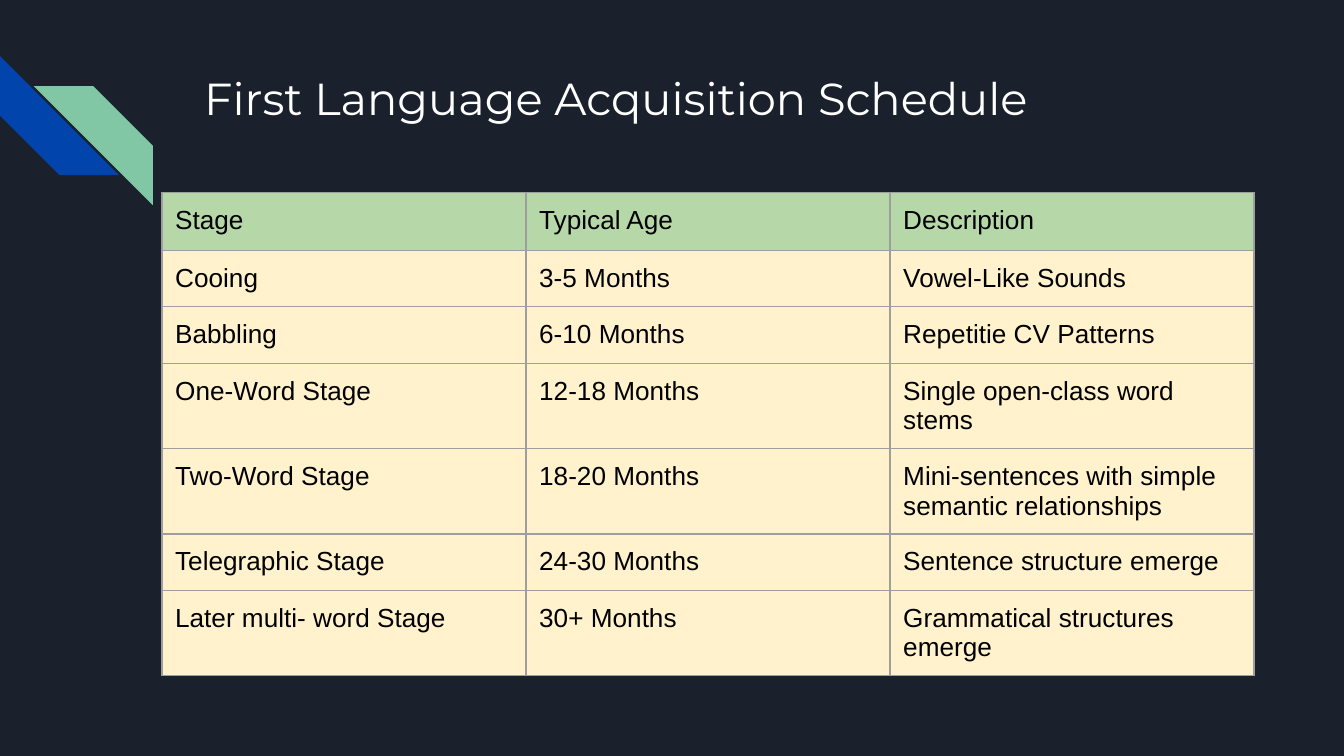
from dataclasses import dataclass

from lxml import etree
from pptx import Presentation
from pptx.dml.color import RGBColor
from pptx.enum.shapes import MSO_SHAPE
from pptx.enum.text import MSO_ANCHOR, PP_ALIGN
from pptx.oxml.ns import qn
from pptx.util import Cm, Pt

STRIPE = MSO_SHAPE.DIAGONAL_STRIPE
TOP = MSO_ANCHOR.TOP
LEFT = PP_ALIGN.LEFT
TITLE_ONLY = 5
INSET = Cm(0.25)
MARGINS = ("margin_left", "margin_top", "margin_right", "margin_bottom")
BORDER_SIDES = ("a:lnL", "a:lnR", "a:lnT", "a:lnB")


@dataclass(frozen=True)
class Theme:
    """Colours, fonts and type sizes of the slide."""
    background: str = "1B212C"
    blue: str = "0145AC"
    green: str = "82C7A5"
    header: str = "B6D7A8"
    body: str = "FFF2CC"
    border: str = "9E9E9E"
    title_text: str = "FFFFFF"
    cell_text: str = "000000"
    title_font: str = "Montserrat"
    cell_font: str = "Arial"
    title_size: float = 24
    cell_size: float = 14
    border_width: float = 0.75


THEME = Theme()
STAGES = (
    ("Stage", "Typical Age", "Description"),
    ("Cooing", "3-5 Months", "Vowel-Like Sounds"),
    ("Babbling", "6-10 Months", "Repetitie CV Patterns"),
    ("One-Word Stage", "12-18 Months", "Single open-class word stems"),
    ("Two-Word Stage", "18-20 Months", "Mini-sentences with simple semantic relationships"),
    ("Telegraphic Stage", "24-30 Months", "Sentence structure emerge"),
    ("Later multi- word Stage", "30+ Months", "Grammatical structures emerge"),
)
ROW_HEIGHTS = (1.09, 1.07, 1.07, 1.09, 1.35, 1.07, 1.35)


def paint(fill, color):
    """Give a fill one solid colour."""
    fill.solid()
    fill.fore_color.rgb = RGBColor.from_string(color)


def style_text(paragraph, font_name, size, color):
    """Set the font and alignment of a paragraph."""
    paragraph.alignment = LEFT
    paragraph.font.name = font_name
    paragraph.font.size = Pt(size)
    paragraph.font.bold = False
    paragraph.font.color.rgb = RGBColor.from_string(color)


def set_margins(holder):
    """Give a text frame or cell equal margins on all sides."""
    for margin in MARGINS:
        setattr(holder, margin, INSET)


def add_stripe(group, left, top, size, color):
    """Add a square diagonal stripe to a group."""
    stripe = group.shapes.add_shape(STRIPE, left, top, size, size)
    stripe.shadow.inherit = False
    paint(stripe.fill, color)
    stripe.line.fill.background()
    return stripe


def add_ornament(slide, left, top, size):
    """Place the pair of crossing stripes from the given corner."""
    group = slide.shapes.add_group_shape()
    blue = add_stripe(group, left, top, size, THEME.blue)
    blue.rotation = 270
    green = add_stripe(group, left + Cm(0.64), top + Cm(0.57), size, THEME.green)
    green.element.spPr.find(qn("a:xfrm")).set("flipH", "1")


def add_title(slide, left, top, width, height, text):
    """Place and format the title placeholder."""
    title = slide.shapes.title
    title.left, title.top, title.width, title.height = left, top, width, height
    frame = title.text_frame
    frame.text = text
    frame.word_wrap = True
    frame.vertical_anchor = TOP
    set_margins(frame)
    style_text(frame.paragraphs[0], THEME.title_font, THEME.title_size, THEME.title_text)


def add_borders(cell):
    """Draw a thin line on every side of a cell."""
    properties = cell._tc.get_or_add_tcPr()
    for side in BORDER_SIDES:
        line = etree.SubElement(properties, qn(side), w=str(Pt(THEME.border_width)))
        fill = etree.SubElement(line, qn("a:solidFill"))
        etree.SubElement(fill, qn("a:srgbClr"), val=THEME.border)


def add_schedule(slide, left, top, width, rows, heights):
    """Place the stage table with equal columns."""
    columns = len(rows[0])
    height = sum(Cm(value) for value in heights)
    table = slide.shapes.add_table(len(rows), columns, left, top, width, height).table
    table.first_row = table.horz_banding = False
    for column in table.columns:
        column.width = width // columns
    for row_index, texts in enumerate(rows):
        table.rows[row_index].height = Cm(heights[row_index])
        for column_index, text in enumerate(texts):
            cell = table.cell(row_index, column_index)
            cell.text = text
            cell.vertical_anchor = TOP
            set_margins(cell)
            add_borders(cell)
            paint(cell.fill, THEME.body if row_index else THEME.header)
            style_text(cell.text_frame.paragraphs[0], THEME.cell_font, THEME.cell_size, THEME.cell_text)


def main():
    """Build and save the presentation."""
    presentation = Presentation()
    presentation.slide_width = Cm(25.4)
    presentation.slide_height = Cm(14.29)
    slide = presentation.slides.add_slide(presentation.slide_layouts[TITLE_ONLY])
    paint(slide.background.fill, THEME.background)
    add_ornament(slide, Cm(0), Cm(1.06), Cm(2.25))
    add_title(slide, Cm(3.61), Cm(1.09), Cm(19.56), Cm(2.54), "First Language Acquisition Schedule")
    add_schedule(slide, Cm(3.06), Cm(3.64), Cm(20.64), STAGES, ROW_HEIGHTS)
    presentation.save("out.pptx")


if __name__ == "__main__":
    main()
